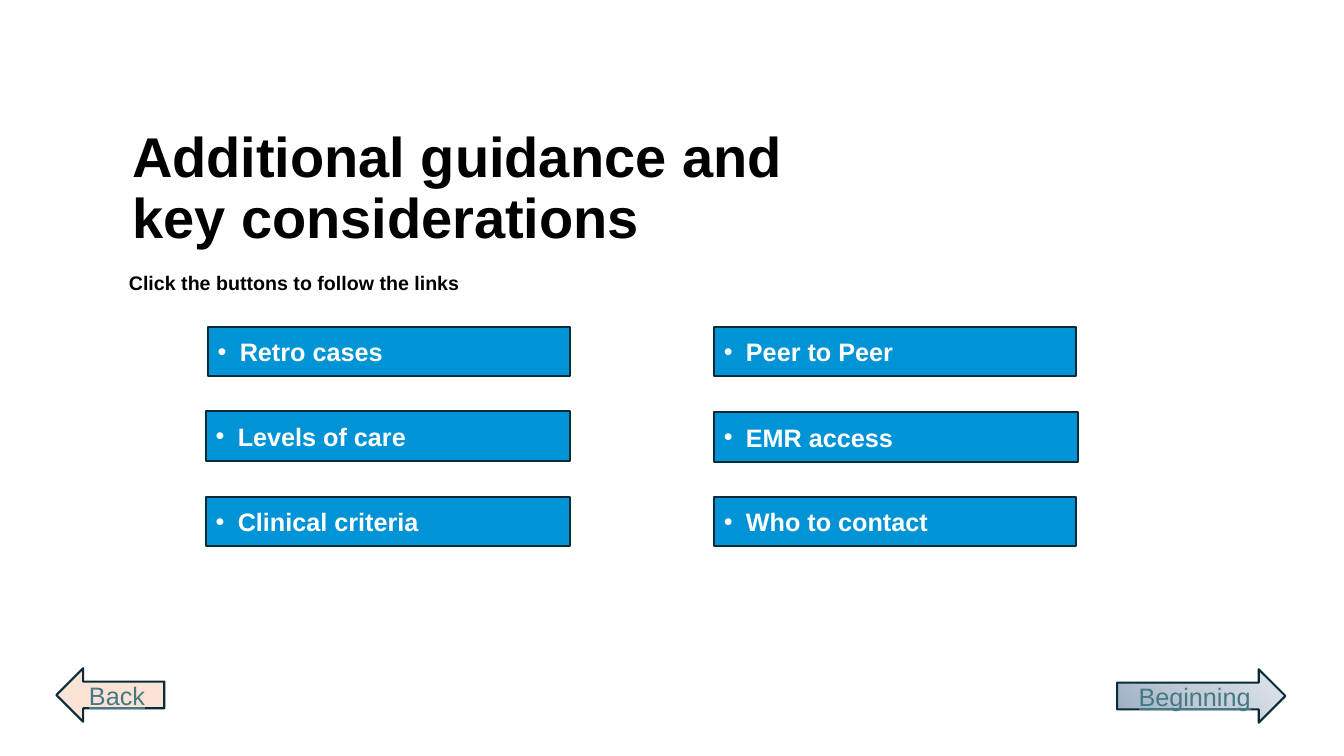
"""Build the guidance menu slide with link buttons and navigation arrows."""
from lxml import etree
from pptx import Presentation
from pptx import util as u
from pptx.dml.color import RGBColor
from pptx.enum import shapes, text
from pptx.oxml import parse_xml
from pptx.oxml.ns import nsdecls, qn

COLORS = {
    "black": "000000", "white": "FFFFFF", "button": "0094D7",
    "outline": "092A39", "peach": "FBE3D6", "link": "467886",
}
BEGINNING_STOPS = [(0, "98ADC1"), (50, "C2CDD7"), (100, "E1E6EB")]
BUTTON_COLUMNS = [
    [("Retro cases", 2.06, 3.24, 3.59),
     ("Levels of care", 2.04, 4.08, 3.61),
     ("Clinical criteria", 2.04, 4.93, 3.61)],
    [("Peer to Peer", 7.08, 3.24, 3.59),
     ("EMR access", 7.08, 4.09, 3.61),
     ("Who to contact", 7.08, 4.93, 3.59)],
]


def style_text(box, size, color, bold, align):
    for para in box.text_frame.paragraphs:
        para.alignment = align
        for span in para.runs:
            span.font.name = "Arial"
            span.font.size = u.Pt(size)
            span.font.bold = bold
            span.font.color.rgb = RGBColor.from_string(COLORS[color])


def add_block(page, kind, label, place, fill):
    block = page.shapes.add_shape(kind, *[u.Inches(length) for length in place])
    block.shadow.inherit = False
    block.fill.solid()
    block.fill.fore_color.rgb = RGBColor.from_string(COLORS[fill])
    block.line.color.rgb = RGBColor.from_string(COLORS["outline"])
    block.line.width = u.Pt(1.5)
    block.text_frame.text = label
    block.text_frame.vertical_anchor = text.MSO_ANCHOR.MIDDLE
    return block


deck = Presentation()
deck.slide_width = u.Inches(13.33)
deck.slide_height = u.Inches(7.5)
page = deck.slides.add_slide(deck.slide_layouts[5])

title = page.shapes.title
title.left, title.top = u.Inches(1.21), u.Inches(1.16)
title.width, title.height = u.Inches(11.39), u.Inches(1.45)
title.text_frame.text = "Additional guidance and \vkey considerations"
title.text_frame.auto_size = text.MSO_AUTO_SIZE.NONE
title.text_frame.vertical_anchor = text.MSO_ANCHOR.MIDDLE
title.text_frame.paragraphs[0].line_spacing = 0.9
style_text(title, 40, "black", True, text.PP_ALIGN.LEFT)

hint = page.shapes.add_textbox(u.Inches(1.18), u.Inches(2.64), u.Inches(3.49), u.Inches(0.34))
hint.text_frame.text = "Click the buttons to follow the links"
hint.text_frame.word_wrap = False
hint.text_frame.auto_size = text.MSO_AUTO_SIZE.SHAPE_TO_FIT_TEXT
style_text(hint, 14, "black", True, text.PP_ALIGN.LEFT)

for column in BUTTON_COLUMNS:
    for label, left, top, width in column:
        button = add_block(page, shapes.MSO_SHAPE.RECTANGLE, label,
                           (left, top, width, 0.49), "button")
        properties = button.text_frame.paragraphs[0]._p.get_or_add_pPr()
        properties.set("marL", str(u.Inches(0.22)))
        properties.set("indent", str(-u.Inches(0.22)))
        etree.SubElement(properties, qn("a:buFont")).set("typeface", "Arial")
        etree.SubElement(properties, qn("a:buChar")).set("char", "•")
        style_text(button, 18, "white", True, text.PP_ALIGN.LEFT)

back = add_block(page, shapes.MSO_SHAPE.LEFT_ARROW, "Back", (0.56, 6.63, 1.07, 0.53), "peach")
beginning = add_block(page, shapes.MSO_SHAPE.RIGHT_ARROW, "Beginning",
                      (11.08, 6.64, 1.67, 0.53), "peach")
for arrow in (back, beginning):
    style_text(arrow, 18, "link", False, text.PP_ALIGN.CENTER)
    arrow.text_frame.paragraphs[0].runs[0].font.underline = True

stops = "".join(
    f'<a:gs pos="{percent * 1000}"><a:srgbClr val="{color}"/></a:gs>'
    for percent, color in BEGINNING_STOPS
)
gradient = parse_xml(
    f'<a:gradFill {nsdecls("a")} rotWithShape="1"><a:gsLst>{stops}</a:gsLst>'
    '<a:path path="circle"><a:fillToRect t="100000" r="100000"/></a:path></a:gradFill>'
)
outline_properties = beginning._element.spPr
outline_properties.replace(outline_properties.find(qn("a:solidFill")), gradient)

deck.save("out.pptx")
